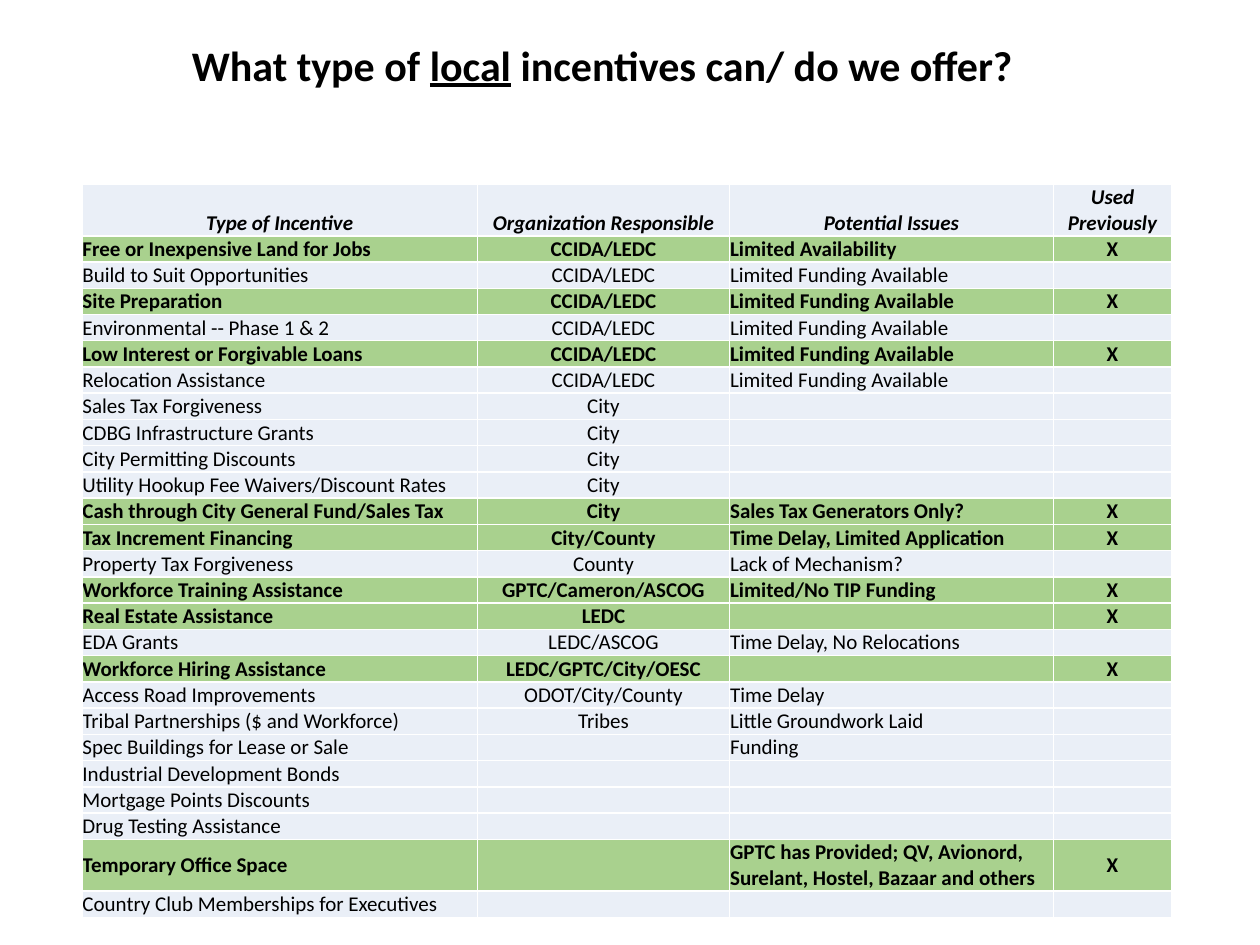
from typing import NamedTuple

from lxml.etree import SubElement
from pptx import Presentation
from pptx.dml.color import RGBColor
from pptx.enum.text import MSO_ANCHOR, PP_ALIGN
from pptx.oxml.ns import qn
from pptx.util import Inches, Pt

COLORS = {"text": "000000", "plain": "EAEFF7", "used": "A9D18E", "border": "FFFFFF"}
FONT = "Calibri"
COL_WIDTHS = (3.14, 2, 2.57, 0.94)
ROW_PT, TALL_ROW_PT = 15, 29.5
MARGIN_PT = 0.35


class Incentive(NamedTuple):
    name: str
    organization: str = ""
    issues: str = ""
    used: bool = False
    tall: bool = False


HEADERS = ("Type of Incentive", "Organization Responsible", "Potential Issues", "Used Previously")
INCENTIVES = (
    Incentive("Free or Inexpensive Land for Jobs", "CCIDA/LEDC", "Limited Availability", True),
    Incentive("Build to Suit Opportunities", "CCIDA/LEDC", "Limited Funding Available"),
    Incentive("Site Preparation", "CCIDA/LEDC", "Limited Funding Available", True),
    Incentive("Environmental -- Phase 1 & 2", "CCIDA/LEDC", "Limited Funding Available"),
    Incentive("Low Interest or Forgivable Loans", "CCIDA/LEDC", "Limited Funding Available", True),
    Incentive("Relocation Assistance", "CCIDA/LEDC", "Limited Funding Available"),
    Incentive("Sales Tax Forgiveness", "City"),
    Incentive("CDBG Infrastructure Grants", "City"),
    Incentive("City Permitting Discounts", "City"),
    Incentive("Utility Hookup Fee Waivers/Discount Rates", "City"),
    Incentive("Cash through City General Fund/Sales Tax", "City", "Sales Tax Generators Only?", True),
    Incentive("Tax Increment Financing", "City/County", "Time Delay, Limited Application", True),
    Incentive("Property Tax Forgiveness", "County", "Lack of Mechanism?"),
    Incentive("Workforce Training Assistance", "GPTC/Cameron/ASCOG", "Limited/No TIP Funding", True),
    Incentive("Real Estate Assistance", "LEDC", used=True),
    Incentive("EDA Grants", "LEDC/ASCOG", "Time Delay, No Relocations"),
    Incentive("Workforce Hiring Assistance", "LEDC/GPTC/City/OESC", used=True),
    Incentive("Access Road Improvements", "ODOT/City/County", "Time Delay"),
    Incentive("Tribal Partnerships ($ and Workforce)", "Tribes", "Little Groundwork Laid"),
    Incentive("Spec Buildings for Lease or Sale", issues="Funding"),
    Incentive("Industrial Development Bonds"),
    Incentive("Mortgage Points Discounts"),
    Incentive("Drug Testing Assistance"),
    Incentive("Temporary Office Space", "",
              "GPTC has Provided; QV, Avionord, Surelant, Hostel, Bazaar and others", True, True),
    Incentive("Country Club Memberships for Executives"),
)


def set_font(p, size: float, bold: bool = False, italic: bool = False) -> None:
    f = p.font
    f.name, f.size, f.bold, f.italic = FONT, Pt(size), bold, italic
    f.color.rgb = RGBColor.from_string(COLORS["text"])


def add_borders(cell) -> None:
    tc_pr = cell._tc.get_or_add_tcPr()
    for side in ("lnL", "lnR", "lnT", "lnB"):
        ln = SubElement(tc_pr, qn(f"a:{side}"), w=str(Pt(1)))
        SubElement(SubElement(ln, qn("a:solidFill")), qn("a:srgbClr"), val=COLORS["border"])


def fill_cell(cell, text: str, fill: str, centered: bool, middle: bool,
              bold: bool, italic: bool = False) -> None:
    add_borders(cell)
    cell.fill.solid()
    cell.fill.fore_color.rgb = RGBColor.from_string(COLORS[fill])
    cell.margin_left = cell.margin_right = cell.margin_top = Pt(MARGIN_PT)
    cell.margin_bottom = 0
    cell.vertical_anchor = MSO_ANCHOR.MIDDLE if middle else MSO_ANCHOR.BOTTOM
    p = cell.text_frame.paragraphs[0]
    p.alignment = PP_ALIGN.CENTER if centered else PP_ALIGN.LEFT
    set_font(p, 12, bold, italic)
    if text:
        p.add_run().text = text
    else:  # keeps empty cells from stretching their row
        p._p.get_or_add_endParaRPr().set("sz", "1200")


def add_title(s) -> None:
    title = s.shapes.title
    title.left, title.top = Inches(1.19), Inches(0.26)
    title.width, title.height = Inches(7.18), Inches(0.5)
    p = title.text_frame.paragraphs[0]
    p.alignment = PP_ALIGN.CENTER
    set_font(p, 24, bold=True)
    for text, underline in (("What type of ", False), ("local", True),
                            (" incentives can/ do we offer?", False)):
        r = p.add_run()
        r.text = text
        r.font.underline = underline


def add_incentive_table(s) -> None:
    heights = [TALL_ROW_PT] + [TALL_ROW_PT if i.tall else ROW_PT for i in INCENTIVES]
    table = s.shapes.add_table(len(heights), len(COL_WIDTHS), Inches(0.65), Inches(1.46),
                               Inches(sum(COL_WIDTHS)), Pt(sum(heights))).table
    table.first_row = table.horz_banding = False
    for col, width in zip(table.columns, COL_WIDTHS):
        col.width = Inches(width)
    for row, height in zip(table.rows, heights):
        row.height = Pt(height)

    # Header row
    for c, text in enumerate(HEADERS):
        fill_cell(table.cell(0, c), text, "plain", True, c == 3, True, True)

    # One row per incentive, green when used previously
    for n, i in enumerate(INCENTIVES, start=1):
        texts = (i.name, i.organization, i.issues, "X" if i.used else "")
        for c, text in enumerate(texts):
            fill_cell(table.cell(n, c), text, "used" if i.used else "plain",
                      c in (1, 3), i.tall, i.used)


def main() -> None:
    prs = Presentation()
    prs.slide_width, prs.slide_height = Inches(10), Inches(7.5)
    s = prs.slides.add_slide(prs.slide_layouts[5])
    add_title(s)
    add_incentive_table(s)
    prs.save("out.pptx")


if __name__ == "__main__":
    main()
